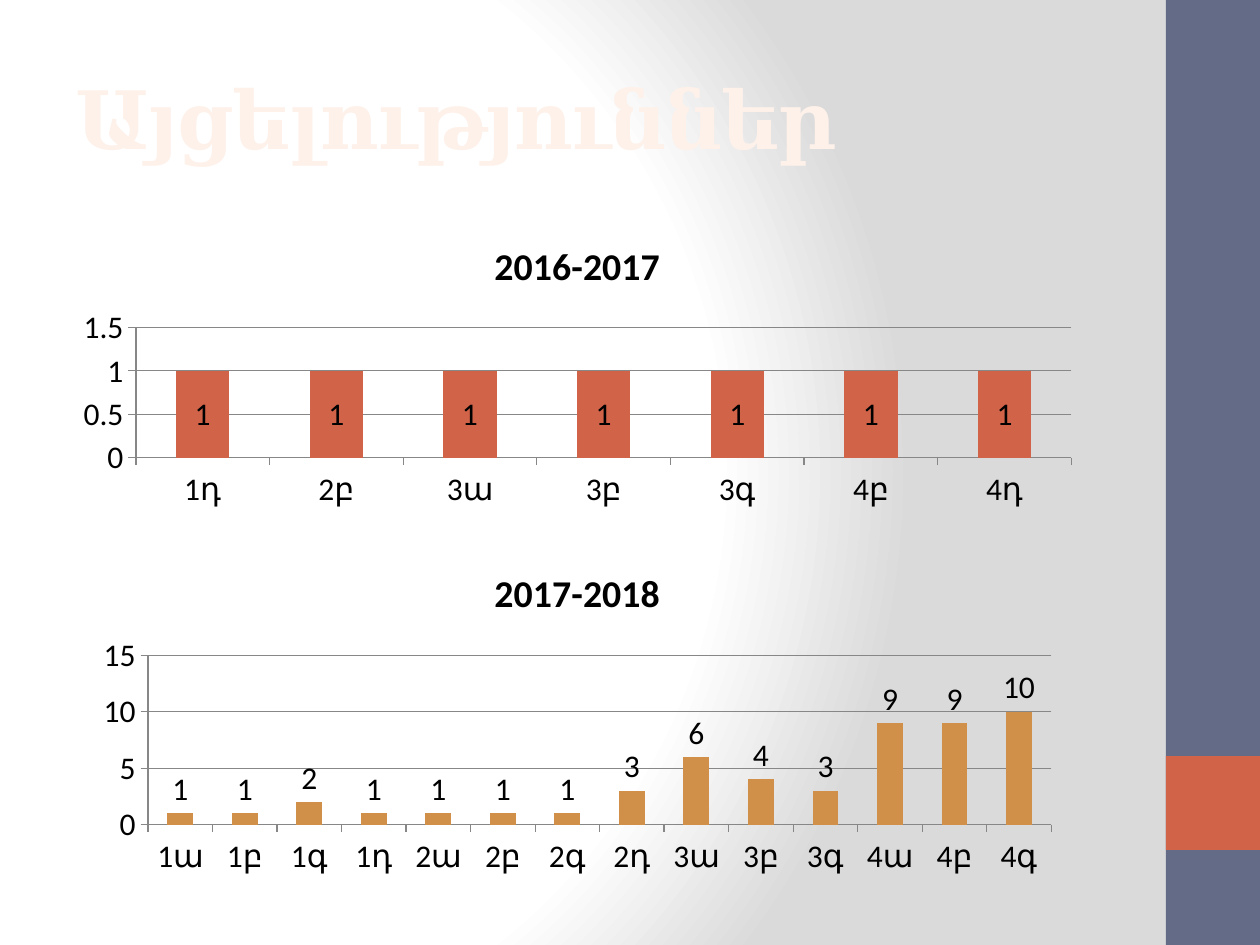
from pptx import Presentation
from pptx.chart.data import CategoryChartData
from pptx.dml.color import RGBColor
from pptx.enum.chart import XL_CHART_TYPE, XL_LABEL_POSITION, XL_TICK_MARK
from pptx.enum.shapes import MSO_SHAPE
from pptx.enum.text import MSO_ANCHOR, MSO_AUTO_SIZE, PP_ALIGN
from pptx.oxml import parse_xml
from pptx.oxml.ns import nsdecls, qn
from pptx.util import Pt

COLUMNS = XL_CHART_TYPE.COLUMN_CLUSTERED
CENTER, OUTSIDE = XL_LABEL_POSITION.CENTER, XL_LABEL_POSITION.OUTSIDE_END
TICK_OUT = XL_TICK_MARK.OUTSIDE
TICK_NONE = XL_TICK_MARK.NONE
RECTANGLE = MSO_SHAPE.RECTANGLE

SCALE = 914400 / 126  # EMU per px
THEME = {
    "slate": "646B86", "red": "D16349", "ochre": "D19049",
    "cream": "FEF1EA", "title_edge": "C86D09", "ink": "000000",
    "grid": "878787", "light": "FFFFFF", "shade": "DADADA",
    "title_font": "Cambria", "chart_font": "Calibri",
    "title_size": 46, "chart_title_size": 21.6, "chart_size": 18,
}


def px(*lengths):
    return [round(length * SCALE) for length in lengths]


def style_font(font, size, color, face, bold):
    formats = {"size": Pt(THEME[size]), "name": THEME[face], "bold": bold}
    for attribute, value in formats.items():
        setattr(font, attribute, value)
    font.color.rgb = RGBColor.from_string(THEME[color])


prs = Presentation()
prs.slide_width, prs.slide_height = px(1260, 945)
slide = prs.slides.add_slide(prs.slide_layouts[5])

# Background: radial gradient
slide.background.fill.gradient()
linear = slide.element.find(".//" + qn("a:gradFill"))
stops = "".join(
    f'<a:gs pos="{percent * 1000}"><a:srgbClr val="{THEME[color]}"/></a:gs>'
    for percent, color in [(0, "light"), (75, "light"), (100, "shade")])
radial = parse_xml(
    f'<a:gradFill {nsdecls("a")} rotWithShape="1"><a:gsLst>{stops}</a:gsLst>'
    '<a:path path="circle"><a:fillToRect l="20000" t="50000" r="100000" b="50000"/>'
    '</a:path></a:gradFill>')
linear.getparent().replace(linear, radial)

# Side band with its accent square
for top, height, color in [(0, 945, "slate"), (756, 94, "red")]:
    band = slide.shapes.add_shape(RECTANGLE, *px(1166, top, 94, height))
    band.shadow.inherit = False
    band.fill.solid()
    band.fill.fore_color.rgb = RGBColor.from_string(THEME[color])
    band.line.fill.background()

# Title
title = slide.shapes.title
title.left, title.top, title.width, title.height = px(63, 38, 1050, 158)
heading = title.text_frame
heading.text = "Այցելություններ"
heading.auto_size = MSO_AUTO_SIZE.NONE
heading.vertical_anchor = MSO_ANCHOR.MIDDLE
heading.paragraphs[0].alignment = PP_ALIGN.LEFT
heading_run = heading.paragraphs[0].runs[0]
style_font(heading_run.font, "title_size", "cream", "title_font", True)
run_format = heading_run.font._element
run_format.set("spc", "-100")
run_format.insert(0, parse_xml(
    f'<a:ln {nsdecls("a")} w="{Pt(2.48)}"><a:solidFill>'
    f'<a:srgbClr val="{THEME["title_edge"]}"/></a:solidFill></a:ln>'))

# Visits per class, one chart for each school year
school_years = [
    ("2016-2017", (63, 220, 1029, 294), "red", CENTER,
     {"1դ": 1, "2բ": 1, "3ա": 1, "3բ": 1, "3գ": 1, "4բ": 1, "4դ": 1}),
    ("2017-2018", (84, 546, 987, 336), "ochre", OUTSIDE,
     {"1ա": 1, "1բ": 1, "1գ": 2, "1դ": 1, "2ա": 1, "2բ": 1, "2գ": 1,
      "2դ": 3, "3ա": 6, "3բ": 4, "3գ": 3, "4ա": 9, "4բ": 9, "4գ": 10}),
]
for year, box, color, label_position, visits in school_years:
    visit_data = CategoryChartData()
    visit_data.categories = list(visits)
    visit_data.add_series(year, list(visits.values()))
    chart = slide.shapes.add_chart(COLUMNS, *px(*box), visit_data).chart
    style_font(chart.font, "chart_size", "ink", "chart_font", False)
    chart.has_legend = False
    chart.has_title = True
    chart.chart_title.text_frame.text = year
    year_run = chart.chart_title.text_frame.paragraphs[0].runs[0]
    style_font(year_run.font, "chart_title_size", "ink", "chart_font", True)

    # Axes and gridlines
    chart.value_axis.has_major_gridlines = True
    grid_color = RGBColor.from_string(THEME["grid"])
    for axis in (chart.category_axis, chart.value_axis):
        axis.major_tick_mark = TICK_OUT
        axis.minor_tick_mark = TICK_NONE
        axis.format.line.color.rgb = grid_color
    chart.value_axis.major_gridlines.format.line.color.rgb = grid_color

    # Columns and value labels
    plot = chart.plots[0]
    plot.gap_width = 150
    plot.vary_by_categories = False
    columns = plot.series[0]
    columns.format.fill.solid()
    columns.format.fill.fore_color.rgb = RGBColor.from_string(THEME[color])
    plot.has_data_labels = True
    plot.data_labels.show_value = True
    plot.data_labels.position = label_position

prs.save("out.pptx")
